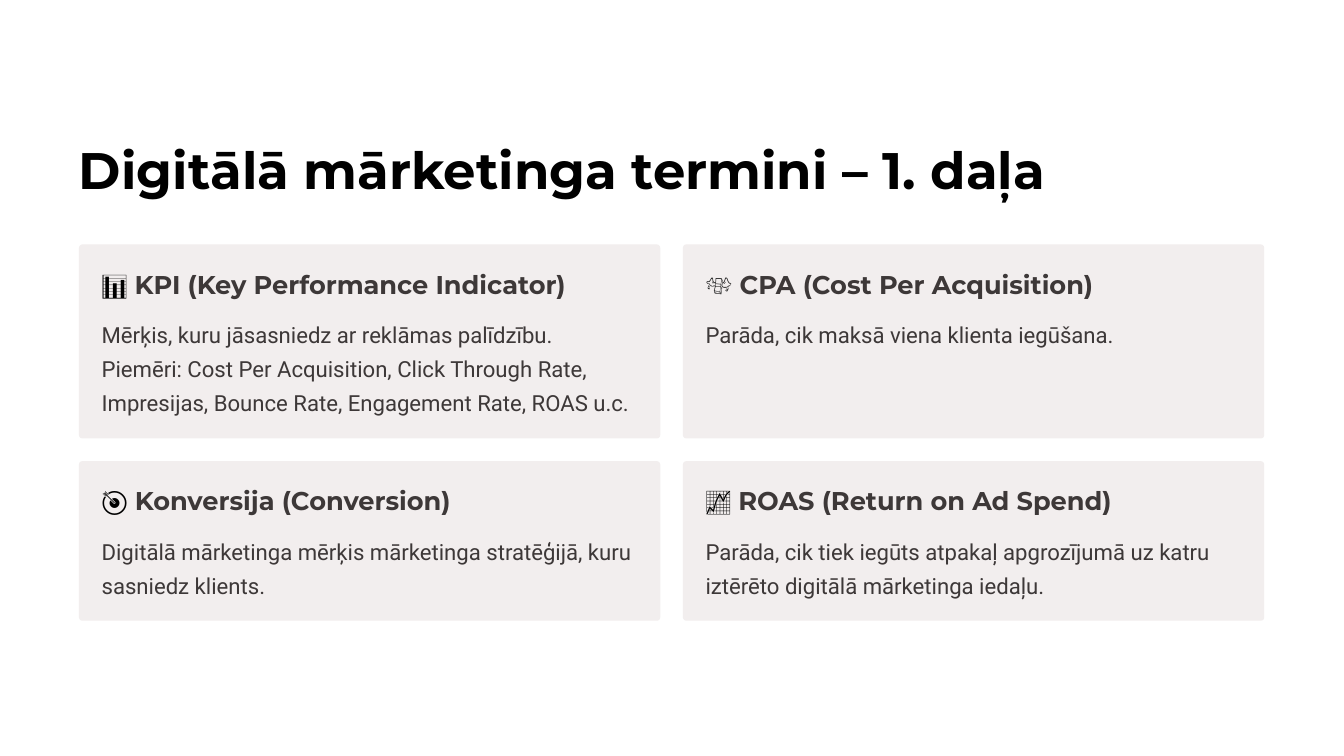
from dataclasses import dataclass

from pptx import Presentation
from pptx import util as u
from pptx.dml.color import RGBColor
from pptx.enum import shapes
from pptx.slide import Slide

EMU_PER_PX = 9144
LEFT, CARDS_TOP = 94, 291
CARD_WIDTH, GAP, PADDING, RADIUS = 692, 27, 27, 4
ROW_HEIGHTS = (231, 190)
HEADING_HEIGHT, BODY_OFFSET, LINE_HEIGHT = 39, 83, 40
BLACK, WHITE, INK, CARD_FILL = "000000", "FFFFFF", "3D3838", "F2EEEE"


@dataclass(frozen=True)
class TextStyle:
    font: str
    size: int
    line_spacing: float
    bold: bool
    wrap: bool


@dataclass(frozen=True)
class Card:
    row: int
    column: int
    icon: str
    term: str
    heading_width: int
    body: str
    body_lines: int


TITLE = TextStyle("Montserrat", 44, 55, True, False)
HEADING = TextStyle("Montserrat", 22, 27.5, True, False)
BODY = TextStyle("Roboto", 19, 29, False, True)

CARDS = (
    Card(0, 0, "📊", "KPI (Key Performance Indicator)", 563,
         "Mērķis, kuru jāsasniedz ar reklāmas palīdzību. Piemēri: Cost Per Acquisition, "
         "Click Through Rate, Impresijas, Bounce Rate, Engagement Rate, ROAS u.c.", 3),
    Card(0, 1, "💸", "CPA (Cost Per Acquisition)", 470,
         "Parāda, cik maksā viena klienta iegūšana.", 1),
    Card(1, 0, "🎯", "Konversija (Conversion)", 425,
         "Digitālā mārketinga mērķis mārketinga stratēģijā, kuru sasniedz klients.", 2),
    Card(1, 1, "📈", "ROAS (Return on Ad Spend)", 494,
         "Parāda, cik tiek iegūts atpakaļ apgrozījumā uz katru iztērēto "
         "digitālā mārketinga iedaļu.", 2),
)


def px(value: int) -> u.Emu:
    return u.Emu(value * EMU_PER_PX)


def color(value: str) -> RGBColor:
    return RGBColor.from_string(value)


def add_text(slide: Slide, left: int, top: int, width: int, height: int,
             runs: tuple[tuple[str, str], ...], style: TextStyle) -> None:
    box = slide.shapes.add_textbox(px(left), px(top), px(width), px(height))
    frame = box.text_frame
    frame.margin_left = frame.margin_right = frame.margin_top = frame.margin_bottom = 0
    frame.word_wrap = style.wrap
    paragraph = frame.paragraphs[0]
    paragraph.line_spacing = u.Pt(style.line_spacing)
    for content, run_color in runs:
        run = paragraph.add_run()
        run.text = content
        run.font.name = style.font
        run.font.size = u.Pt(style.size)
        run.font.bold = style.bold
        run.font.color.rgb = color(run_color)


def add_card(slide: Slide, card: Card) -> None:
    left = LEFT + card.column * (CARD_WIDTH + GAP)
    top = CARDS_TOP + sum(ROW_HEIGHTS[:card.row]) + card.row * GAP
    height = ROW_HEIGHTS[card.row]
    panel = slide.shapes.add_shape(
        shapes.MSO_SHAPE.ROUNDED_RECTANGLE, px(left), px(top), px(CARD_WIDTH), px(height))
    panel.adjustments[0] = RADIUS / height
    panel.shadow.inherit = False
    panel.fill.solid()
    panel.fill.fore_color.rgb = color(CARD_FILL)
    panel.line.fill.background()
    add_text(slide, left + PADDING, top + PADDING, card.heading_width, HEADING_HEIGHT,
             ((card.icon, BLACK), (f" {card.term}", INK)), HEADING)
    add_text(slide, left + PADDING, top + BODY_OFFSET, CARD_WIDTH - 2 * PADDING,
             card.body_lines * LINE_HEIGHT, ((card.body, INK),), BODY)


def main() -> None:
    presentation = Presentation()
    presentation.slide_width, presentation.slide_height = px(1600), px(900)
    slide = presentation.slides.add_slide(presentation.slide_layouts[6])
    slide.background.fill.solid()
    slide.background.fill.fore_color.rgb = color(WHITE)
    add_text(slide, LEFT, 161, 1153, 77,
             (("Digitālā mārketinga termini – 1. daļa", BLACK),), TITLE)
    for card in CARDS:
        add_card(slide, card)
    presentation.save("out.pptx")


if __name__ == "__main__":
    main()
